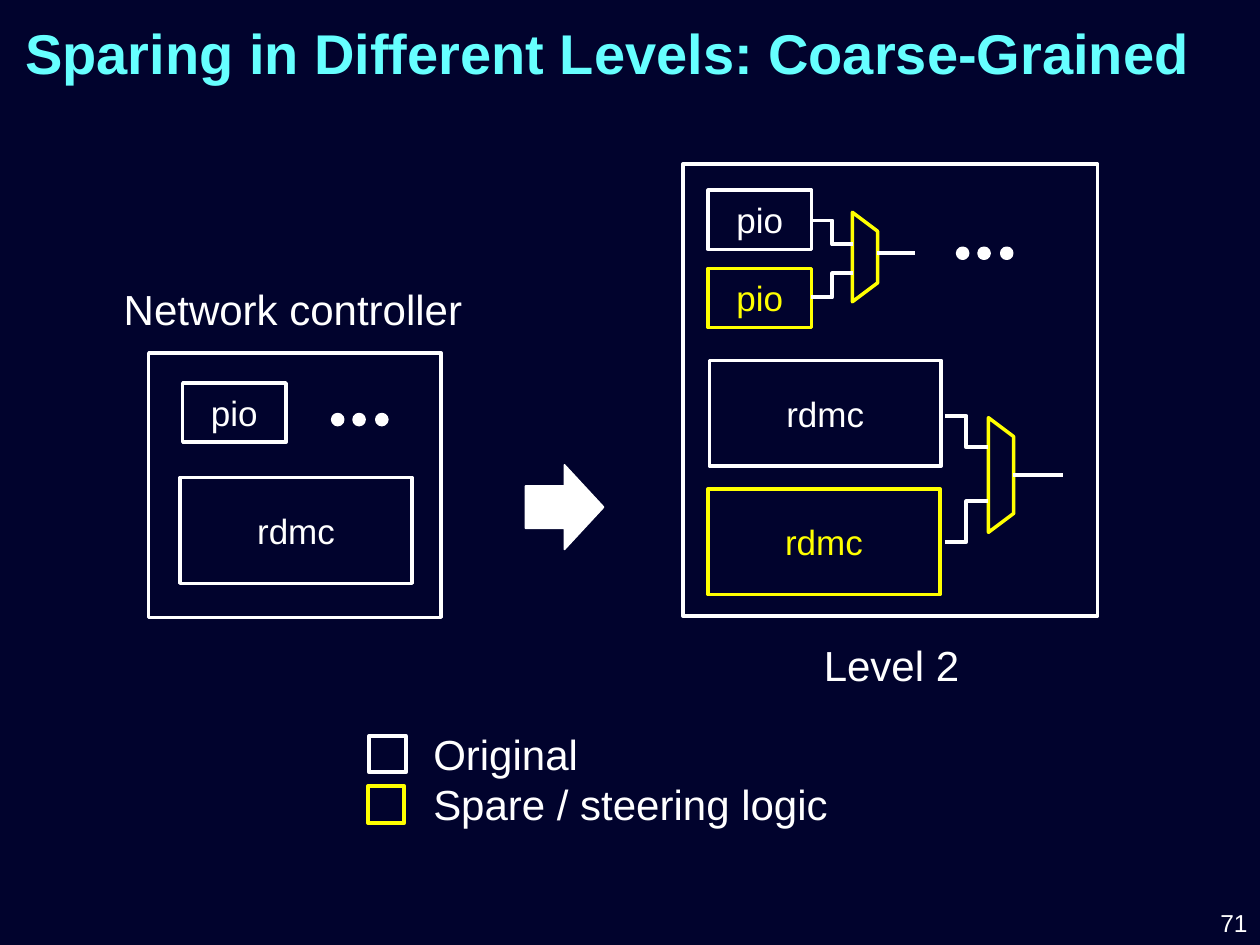
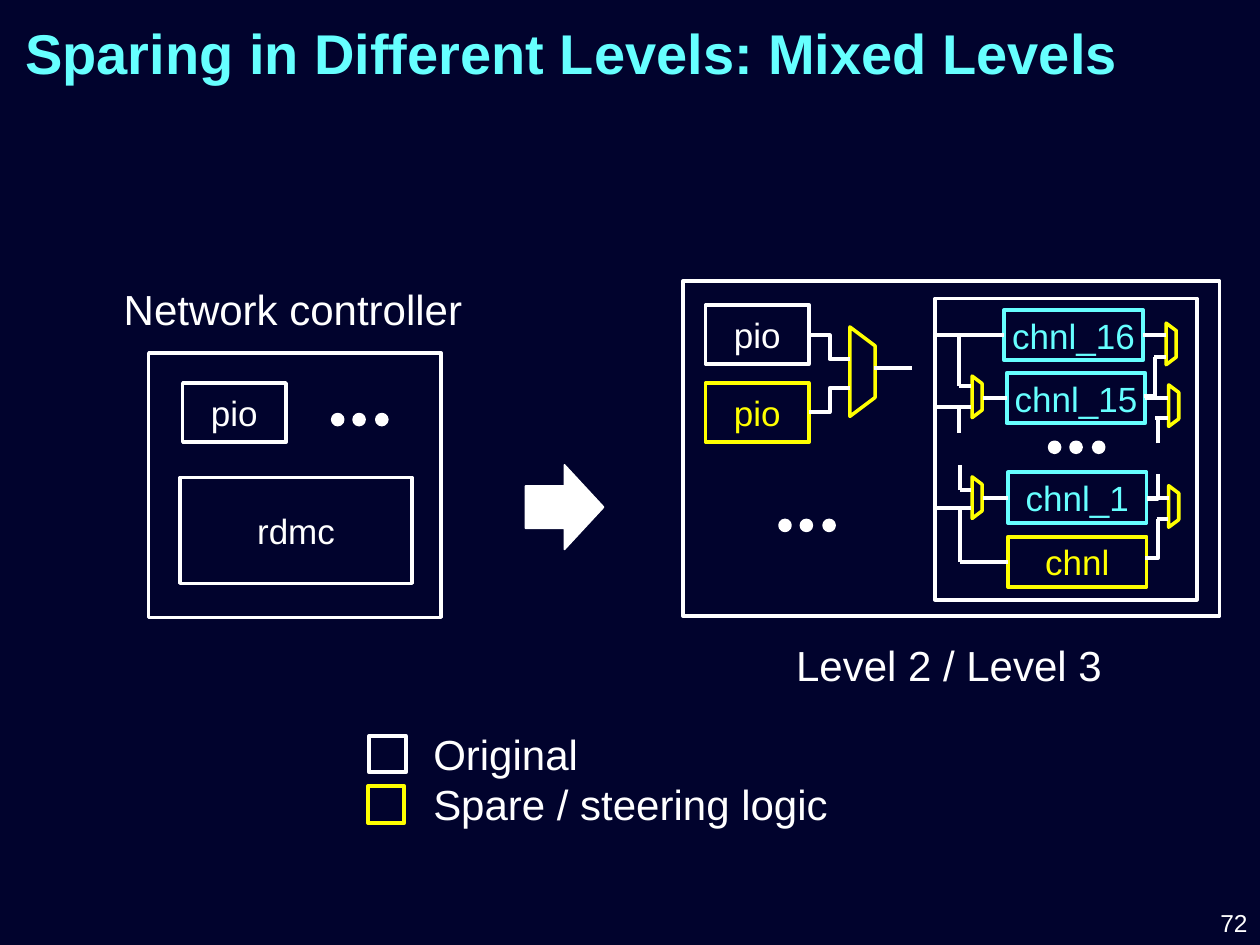
"""Build two slides on sparing a network controller at different levels."""
from dataclasses import dataclass, field
from typing import Any

from lxml import etree
from pptx import Presentation
from pptx.dml.color import RGBColor
from pptx.enum.shapes import MSO_CONNECTOR, MSO_SHAPE
from pptx.enum.text import MSO_ANCHOR, MSO_AUTO_SIZE, PP_ALIGN
from pptx.oxml.ns import qn
from pptx.util import Emu, Pt

RECT, OVAL = MSO_SHAPE.RECTANGLE, MSO_SHAPE.OVAL
TRAPEZOID, ARROW = MSO_SHAPE.TRAPEZOID, MSO_SHAPE.RIGHT_ARROW
STRAIGHT, ELBOW = MSO_CONNECTOR.STRAIGHT, MSO_CONNECTOR.ELBOW
LEFT, CENTER, RIGHT = PP_ALIGN.LEFT, PP_ALIGN.CENTER, PP_ALIGN.RIGHT
TOP, MIDDLE = MSO_ANCHOR.TOP, MSO_ANCHOR.MIDDLE
SIDE_LEFT, SIDE_RIGHT = 1, 3
EMU_PER_PX = 9144


@dataclass(frozen=True)
class Theme:
    """Colours, type sizes and line weights shared by the slides."""
    background: str = "01032D"
    white: str = "FFFFFF"
    spare: str = "FFFF00"
    accent: str = "66FFFF"
    font: str = "Arial"
    title: int = 32
    label: int = 24
    block: int = 20
    number: int = 14
    thin: float = 2
    thick: float = 2.25


THEME = Theme()


@dataclass(frozen=True)
class Box:
    """An outlined rectangle with an optional name."""
    x: int
    y: int
    w: int
    h: int
    text: str = ""
    color: str = THEME.white
    weight: float = THEME.thin


@dataclass(frozen=True)
class Mux:
    """A multiplexer given by its centre, height and depth."""
    x: int
    y: int
    span: int
    depth: int


@dataclass(frozen=True)
class Wire:
    """A line between two points, joined to named boxes where given."""
    x1: int
    y1: int
    x2: int
    y2: int
    kind: str = "straight"
    begin: str = ""
    end: str = ""


@dataclass(frozen=True)
class Label:
    """A line or two of text in a frame."""
    x: int
    y: int
    w: int
    h: int
    text: str
    size: int = THEME.label
    align: Any = LEFT
    anchor: Any = TOP


@dataclass(frozen=True)
class Diagram:
    """Everything that makes up a drawing."""
    boxes: list[Box] = field(default_factory=list)
    muxes: list[Mux] = field(default_factory=list)
    wires: list[Wire] = field(default_factory=list)
    dots: list[tuple[int, int]] = field(default_factory=list)
    labels: list[Label] = field(default_factory=list)


def px(n: int) -> Emu:
    """Turn px into EMU."""
    return Emu(n * EMU_PER_PX)


def rgb(color: str) -> RGBColor:
    """Turn a hex string into a colour."""
    return RGBColor.from_string(color)


def style_text(tf: Any, size: int, color: str, align: Any, bold: bool = False) -> None:
    """Format every run of a text frame."""
    for p in tf.paragraphs:
        p.alignment = align
        for r in p.runs:
            r.font.name = THEME.font
            r.font.size = Pt(size)
            r.font.bold = bold
            r.font.color.rgb = rgb(color)


def add_shape(shapes: Any, kind: Any, x: int, y: int, w: int, h: int,
              line: str, weight: float, fill: str = "") -> Any:
    """Add a preset shape without shadow."""
    sp = shapes.add_shape(kind, px(x), px(y), px(w), px(h))
    sp.shadow.inherit = False
    if fill:
        sp.fill.solid()
        sp.fill.fore_color.rgb = rgb(fill)
    else:
        sp.fill.background()
    sp.line.color.rgb = rgb(line)
    sp.line.width = Pt(weight)
    return sp


def add_box(shapes: Any, box: Box) -> Any:
    """Draw a rectangle and its name."""
    sp = add_shape(shapes, RECT, box.x, box.y, box.w, box.h, box.color, box.weight)
    if box.text:
        tf = sp.text_frame
        tf.text = box.text
        tf.word_wrap = True
        tf.vertical_anchor = MIDDLE
        tf.margin_left = tf.margin_right = tf.margin_top = tf.margin_bottom = 0
        style_text(tf, THEME.block, box.color, CENTER)
    return sp


def add_mux(shapes: Any, mux: Mux) -> None:
    """Draw a multiplexer as a trapezoid on its side."""
    sp = add_shape(shapes, TRAPEZOID, mux.x - mux.span // 2, mux.y - mux.depth // 2,
                   mux.span, mux.depth, THEME.spare, THEME.thin)
    sp.adjustments[0] = 0.75
    sp.rotation = 90


def add_wire(shapes: Any, wire: Wire, named: dict[str, Any]) -> None:
    """Draw a straight, stepped or cornered wire."""
    kind = STRAIGHT if wire.kind == "straight" else ELBOW
    c = shapes.add_connector(kind, px(wire.x1), px(wire.y1), px(wire.x2), px(wire.y2))
    if wire.begin:
        c.begin_connect(named[wire.begin], SIDE_RIGHT)
    if wire.end:
        c.end_connect(named[wire.end], SIDE_LEFT)
    c.line.color.rgb = rgb(THEME.white)
    c.line.width = Pt(THEME.thick)
    props = c.element.spPr
    if wire.kind == "corner":
        props.find(qn("a:prstGeom")).set("prst", "bentConnector2")
    etree.SubElement(props, qn("a:effectLst"))


def add_dots(shapes: Any, x: int, y: int) -> None:
    """Draw three dots in a row as one group."""
    group = shapes.add_group_shape()
    for step in (0, 17, 35):
        add_shape(group.shapes, OVAL, x + step, y, 8, 8, THEME.white, THEME.thin, THEME.white)


def add_label(shapes: Any, label: Label) -> None:
    """Draw a text box."""
    tf = shapes.add_textbox(px(label.x), px(label.y), px(label.w), px(label.h)).text_frame
    tf.text = label.text
    tf.word_wrap = True
    tf.vertical_anchor = label.anchor
    style_text(tf, label.size, THEME.white, label.align)


def draw(shapes: Any, diagram: Diagram) -> None:
    """Draw all parts of a diagram."""
    named = {box.text: add_box(shapes, box) for box in diagram.boxes}
    for mux in diagram.muxes:
        add_mux(shapes, mux)
    for wire in diagram.wires:
        add_wire(shapes, wire, named)
    for x, y in diagram.dots:
        add_dots(shapes, x, y)
    for label in diagram.labels:
        add_label(shapes, label)


def pio(x: int, y: int, color: str = THEME.white) -> Box:
    """Give a pio block."""
    return Box(x, y, 82, 47, "pio", color)


def rdmc(x: int, y: int, color: str = THEME.white) -> Box:
    """Give an rdmc block."""
    return Box(x, y, 184, 84, "rdmc", color)


def channel(x: int, y: int, text: str, color: str = THEME.accent) -> Box:
    """Give a channel block."""
    return Box(x, y, 110, 40, text, color, THEME.thick)


def spared_pio(x: int, y: int) -> Diagram:
    """Give a pio block, its spare and the steering logic."""
    return Diagram(
        boxes=[pio(x, y), pio(x, y + 62, THEME.spare)],
        muxes=[Mux(x + 124, y + 53, 71, 20)],
        wires=[Wire(x + 82, y + 24, x + 115, y + 43, "step"),
               Wire(x + 82, y + 85, x + 115, y + 66, "step"),
               Wire(x + 134, y + 50, x + 164, y + 50)])


CONTROLLER = Diagram(
    boxes=[Box(118, 280, 232, 210), pio(145, 304), rdmc(143, 379)],
    dots=[(264, 329)],
    labels=[Label(46, 220, 373, 50, "Network controller", align=CENTER)])

LEGEND = Diagram(
    boxes=[Box(293, 584, 29, 29, weight=THEME.thick),
           Box(292, 624, 29, 29, color=THEME.spare, weight=THEME.thick)],
    labels=[Label(334, 573, 622, 91, "Original\nSpare / steering logic")])

COARSE = Diagram(
    boxes=[Box(542, 130, 329, 359), rdmc(563, 286), rdmc(562, 388, THEME.spare)],
    muxes=[Mux(794, 377, 91, 20)],
    wires=[Wire(750, 330, 784, 355, "step"), Wire(750, 430, 784, 398, "step"),
           Wire(804, 377, 844, 377)],
    dots=[(760, 197)],
    labels=[Label(644, 503, 143, 50, "Level 2")])

MIXED = Diagram(
    boxes=[Box(542, 223, 426, 266), Box(742, 237, 208, 239),
           channel(797, 246, "chnl_16"), channel(799, 296, "chnl_15"),
           channel(800, 375, "chnl_1"), channel(800, 426, "chnl", THEME.spare)],
    muxes=[Mux(x, y, 33, 8) for x, y in
           ((775, 315), (775, 395), (929, 273), (931, 322), (931, 402))],
    wires=[Wire(742, 266, 797, 266, end="chnl_16"),
           Wire(780, 316, 799, 316, end="chnl_15"),
           Wire(780, 395, 800, 395, end="chnl_1"),
           Wire(762, 446, 800, 446, end="chnl"),
           Wire(761, 266, 761, 306), Wire(761, 306, 771, 306),
           Wire(742, 323, 771, 323), Wire(761, 323, 761, 344),
           Wire(762, 369, 762, 389), Wire(762, 389, 771, 389),
           Wire(742, 403, 771, 403), Wire(762, 403, 762, 446),
           Wire(907, 266, 925, 266, begin="chnl_16"),
           Wire(909, 316, 927, 316, begin="chnl_15"),
           Wire(910, 395, 928, 395, begin="chnl_1"),
           Wire(908, 314, 917, 283, "corner"), Wire(916, 283, 925, 283),
           Wire(919, 352, 919, 332), Wire(917, 332, 927, 332),
           Wire(910, 396, 919, 376, "corner"),
           Wire(909, 443, 919, 412, "corner"), Wire(918, 412, 927, 412)],
    dots=[(619, 413), (833, 351)],
    labels=[Label(622, 503, 292, 50, "Level 2 / Level 3")])


def add_slide(prs: Any, title: str, number: int, diagrams: list[Diagram]) -> None:
    """Add a slide with the shared parts and its own diagrams."""
    s = prs.slides.add_slide(prs.slide_layouts[5])
    sp = s.shapes.title
    sp.left, sp.top, sp.width, sp.height = px(10), px(10), px(976), px(70)
    tf = sp.text_frame
    tf.text = title
    tf.word_wrap = True
    tf.auto_size = MSO_AUTO_SIZE.NONE
    tf.vertical_anchor = MIDDLE
    tf.paragraphs[0].line_spacing = 0.9
    style_text(tf, THEME.title, THEME.accent, LEFT, bold=True)
    add_shape(s.shapes, ARROW, 417, 369, 62, 67, THEME.white, 1, THEME.white)
    for diagram in (*diagrams, CONTROLLER, LEGEND):
        draw(s.shapes, diagram)
    add_label(s.shapes, Label(818, 715, 182, 35, str(number), THEME.number, RIGHT, MIDDLE))


def main() -> None:
    """Build and save the presentation."""
    prs = Presentation()
    prs.slide_width, prs.slide_height = px(1000), px(750)
    fill = prs.slide_master.background.fill
    fill.solid()
    fill.fore_color.rgb = rgb(THEME.background)
    heading = "Sparing in Different Levels: "
    add_slide(prs, heading + "Coarse-Grained", 71, [COARSE, spared_pio(562, 151)])
    add_slide(prs, heading + "Mixed Levels", 72, [MIXED, spared_pio(560, 242)])
    prs.save("out.pptx")


if __name__ == "__main__":
    main()
